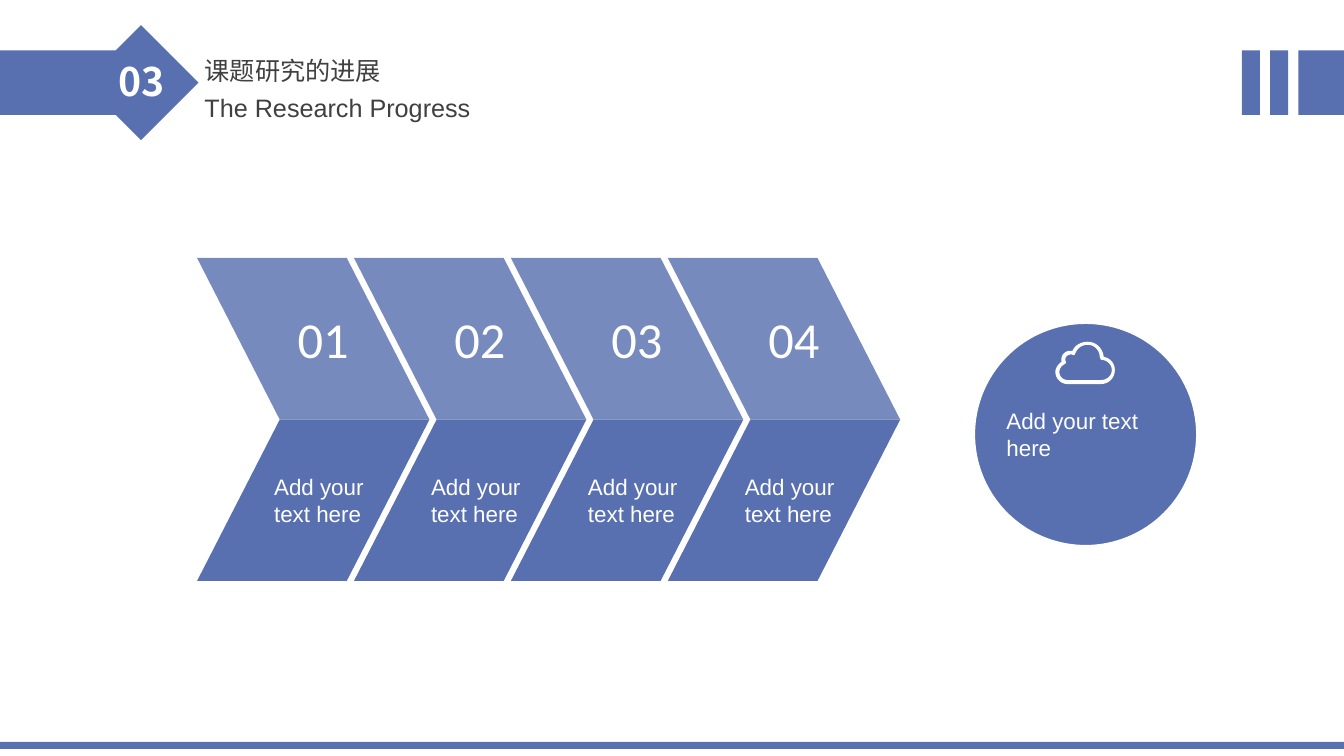
from dataclasses import dataclass

from lxml.etree import SubElement
from pptx import Presentation
from pptx.dml.color import RGBColor
from pptx.enum.shapes import MSO_SHAPE as Preset
from pptx.enum.text import MSO_ANCHOR as Anchor, MSO_AUTO_SIZE as AutoSize, PP_ALIGN as Align
from pptx.oxml.ns import qn
from pptx.shapes.autoshape import Shape
from pptx.util import Emu, Pt

# The slide is a grid of 160 columns by 90 rows of square cells
COLUMNS, ROWS = 160, 90
CELL = 76200

Point = tuple[float, float]
Curve = tuple[Point, Point, Point]


@dataclass(frozen=True)
class Theme:
    blue: str = "5870B0"
    white: str = "FFFFFF"
    soft_white: str = "FFFEFE"
    grey: str = "404040"
    latin: str = "Arial"
    digits: str = "Calibri"
    chinese: str = "Noto Sans CJK SC"
    body: int = 16
    heading: int = 18
    section: int = 28
    number: int = 36
    upper_opacity: int = 81


@dataclass(frozen=True)
class Area:
    column: float
    row: float
    width: float
    height: float

    def emu(self) -> list[Emu]:
        return [cells(n) for n in (self.column, self.row, self.width, self.height)]


@dataclass(frozen=True)
class Step:
    number: str
    caption: str


THEME = Theme()

# Header pieces
BAND_ROW, BAND_HEIGHT = 6, 7.68
BAR_START, BAR_PITCH, BAR_WIDTH = 147.84, 3.36, 2.16

# Arrow row: each step is one pitch to the right of the one before
STEPS = [Step(f"{n:02}", "Add your text here") for n in range(1, 5)]
STEP_START, STEP_PITCH, STEP_WIDTH, STEP_LEAN = 23.46, 18.68, 17.82, 9.84
STEP_TOP, STEP_MIDDLE, STEP_BOTTOM = 30.72, 49.96, 69.16

# Cloud: start point and Bezier curves of each contour, in CLOUD_UNIT cells
CLOUD_COLUMN, CLOUD_ROW, CLOUD_UNIT = 125.64, 40.68, 0.12
CLOUD: list[tuple[Point, list[Curve]]] = [
    ((48, 15), [
        ((47, 6), (40, 0), (32, 0)), ((25, 0), (19, 4), (17, 9)),
        ((16, 9), (15, 9), (14, 9)), ((10, 9), (6, 13), (6, 17)),
        ((6, 18), (6, 19), (6, 20)), ((3, 22), (0, 26), (0, 30)),
        ((0, 37), (6, 42), (12, 42)), ((12, 42), (45, 42), (45, 42)),
        ((53, 42), (59, 36), (59, 28)), ((59, 21), (54, 16), (48, 15)),
    ]),
    ((45, 38), [
        ((45, 38), (12, 38), (12, 38)), ((8, 38), (4, 35), (4, 30)),
        ((4, 27), (6, 24), (8, 23)), ((11, 21), (11, 21), (10, 19)),
        ((10, 18), (10, 18), (10, 17)), ((10, 15), (12, 13), (14, 13)),
        ((14, 13), (15, 12), (17, 13)), ((19, 14), (19, 13), (20, 11)),
        ((22, 6), (27, 3), (32, 3)), ((38, 3), (44, 8), (44, 15)),
        ((45, 18), (45, 18), (47, 18)), ((52, 19), (56, 23), (56, 28)),
        ((56, 34), (51, 38), (45, 38)),
    ]),
]


def cells(count: float) -> Emu:
    return Emu(round(count * CELL))


def paint(shape: Shape, color: str, opacity: int = 100) -> Shape:
    shape.shadow.inherit = False
    shape.line.fill.background()
    shape.fill.solid()
    shape.fill.fore_color.rgb = RGBColor.from_string(color)
    if opacity < 100:
        for tint in shape.fill._xPr.iter(qn("a:srgbClr")):
            SubElement(tint, qn("a:alpha"), val=str(opacity * 1000))
    return shape


def add_block(page, preset: Preset, area: Area) -> Shape:
    return paint(page.shapes.add_shape(preset, *area.emu()), THEME.blue)


def add_outline(page, contours: list[list[Point]], color: str, opacity: int = 100) -> Shape:
    placed = [[(cells(x), cells(y)) for x, y in contour] for contour in contours]
    builder = page.shapes.build_freeform(*placed[0][0])
    for index, (start, *rest) in enumerate(placed):
        if index:
            builder.move_to(*start)
        builder.add_line_segments(rest, close=True)
    return paint(builder.convert_to_shape(), color, opacity)


def flatten(start: Point, curves: list[Curve], pieces: int = 8) -> list[Point]:
    """Turn Bezier curves into points on the grid."""
    points = [start]
    for first, second, end in curves:
        begin = points[-1]
        for piece in range(1, pieces + 1):
            t = piece / pieces
            weights = ((1 - t) ** 3, 3 * t * (1 - t) ** 2, 3 * t * t * (1 - t), t ** 3)
            controls = (begin, first, second, end)
            x, y = (sum(w * c[axis] for w, c in zip(weights, controls)) for axis in (0, 1))
            points.append((x, y))
    return [(CLOUD_COLUMN + x * CLOUD_UNIT, CLOUD_ROW + y * CLOUD_UNIT) for x, y in points]


def write(box: Shape, text: str, *, size: int, color: str, font: str = THEME.latin,
          bold: bool = False, align: Align = Align.LEFT, anchor: Anchor = Anchor.TOP,
          wrap: bool = True, inset: bool = True, spacing: float = 1.0) -> None:
    frame = box.text_frame
    frame.auto_size = AutoSize.NONE
    frame.word_wrap = wrap
    frame.vertical_anchor = anchor
    if not inset:
        frame.margin_left = frame.margin_top = frame.margin_right = frame.margin_bottom = 0
    para = frame.paragraphs[0]
    para.alignment = align
    para.line_spacing = spacing
    span = para.add_run()
    span.text = text
    span.font.size = Pt(size)
    span.font.bold = bold
    span.font.color.rgb = RGBColor.from_string(color)
    span.font.name = font
    SubElement(span._r.get_or_add_rPr(), qn("a:ea"), typeface=font)


def add_text(page, area: Area, text: str, **style) -> None:
    write(page.shapes.add_textbox(*area.emu()), text, **style)


def draw_header(page) -> None:
    add_block(page, Preset.RECTANGLE, Area(0, BAND_ROW, 13.8, BAND_HEIGHT))
    add_block(page, Preset.DIAMOND, Area(9.96, 3, 13.68, 13.68))
    for index in range(3):
        left = BAR_START + index * BAR_PITCH
        width = BAR_WIDTH if index < 2 else COLUMNS - left
        add_block(page, Preset.RECTANGLE, Area(left, BAND_ROW, width, BAND_HEIGHT))
    add_text(page, Area(12.48, 6.24, 8.64, 6.84), "03", size=THEME.section, color=THEME.white,
             font=THEME.chinese, bold=True, align=Align.CENTER)
    title = page.shapes.title
    title.left, title.top, title.width, title.height = Area(23.16, 2.4, 23.64, 7.44).emu()
    write(title, "课题研究的进展", size=THEME.heading, color=THEME.grey,
          font=THEME.chinese, wrap=False, spacing=2.0)
    add_text(page, Area(23.16, 10.44, 65.88, 4.8), "The Research Progress",
             size=THEME.heading, color=THEME.grey)


def draw_step(page, step: Step, index: int) -> None:
    shift = index * STEP_PITCH
    left = STEP_START + shift
    for edge, opacity in ((STEP_BOTTOM, 100), (STEP_TOP, THEME.upper_opacity)):
        tip = left + STEP_LEAN
        add_outline(page, [[(left, edge), (left + STEP_WIDTH, edge),
                            (tip + STEP_WIDTH, STEP_MIDDLE), (tip, STEP_MIDDLE)]],
                    THEME.blue, opacity)
    add_text(page, Area(33.72 + shift, 36.12, 9.48, 8.52), step.number, size=THEME.number,
             color=THEME.white, font=THEME.digits, align=Align.CENTER)
    add_text(page, Area(32.64 + shift, 56.58, 11.52, 6), step.caption, size=THEME.body,
             color=THEME.soft_white, anchor=Anchor.MIDDLE, inset=False)


def draw_result(page) -> None:
    circle = add_block(page, Preset.OVAL, Area(115.92, 38.4, 26.64, 26.64))
    circle.line.color.rgb = RGBColor.from_string(THEME.white)
    circle.line.width = Pt(2)
    write(circle, "Add your text here", size=THEME.body, color=THEME.soft_white,
          anchor=Anchor.MIDDLE, inset=False)
    add_outline(page, [flatten(start, curves) for start, curves in CLOUD], THEME.soft_white)


def main() -> None:
    deck = Presentation()
    deck.slide_width, deck.slide_height = cells(COLUMNS), cells(ROWS)
    page = deck.slides.add_slide(deck.slide_layouts.get_by_name("Title Only"))
    draw_header(page)
    for index, step in enumerate(STEPS):
        draw_step(page, step, index)
    draw_result(page)
    # Footer line
    add_block(page, Preset.RECTANGLE, Area(0, 88.32, COLUMNS, 0.84))
    deck.save("out.pptx")


if __name__ == "__main__":
    main()
